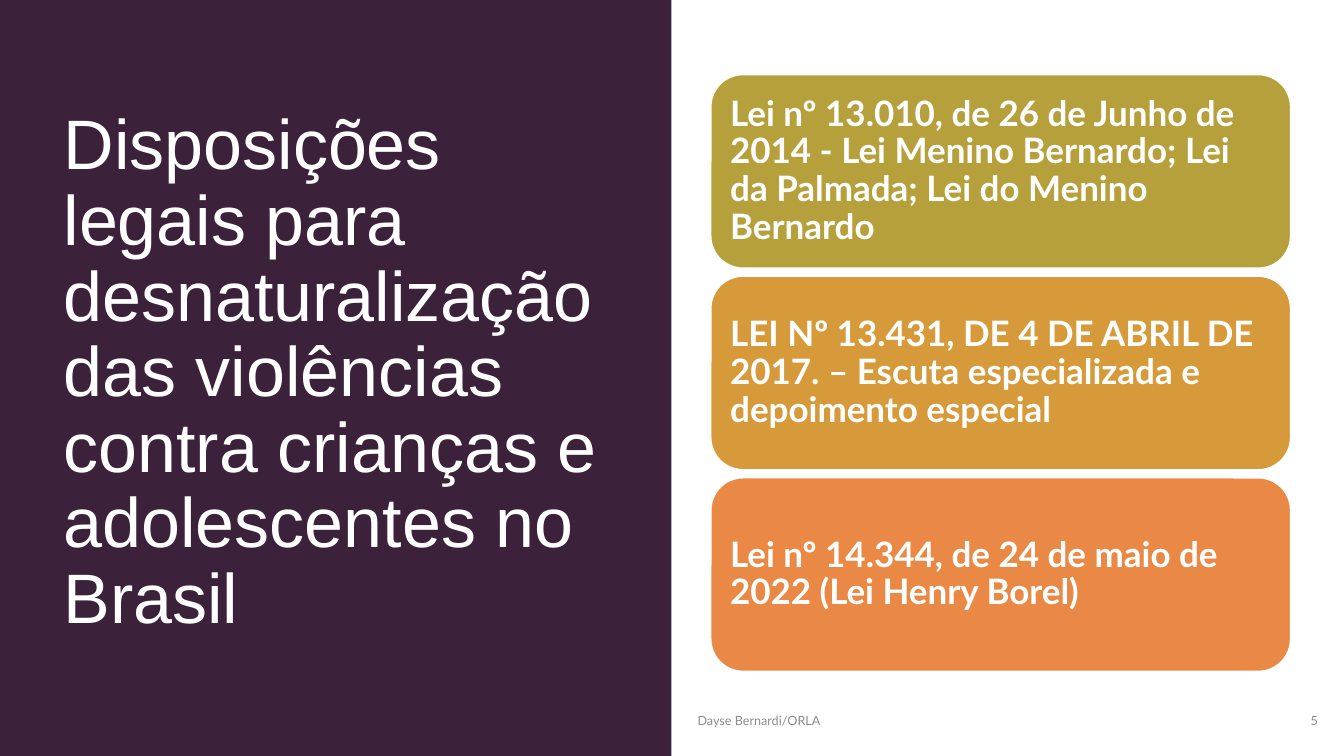
"""Build the slide on Brazilian child-protection laws."""
from pptx import Presentation
from pptx.dml.color import RGBColor
from pptx.enum.shapes import MSO_SHAPE
from pptx.enum.text import MSO_ANCHOR, MSO_AUTO_SIZE, PP_ALIGN
from pptx.util import Inches, Pt

PLUM = RGBColor(0x3B, 0x21, 0x3A)
WHITE = RGBColor(0xFF, 0xFF, 0xFF)
GRAY = RGBColor(0x8C, 0x8C, 0x8C)
OLIVE = RGBColor(0xB6, 0xA0, 0x3C)
OCHRE = RGBColor(0xD6, 0x9A, 0x3B)
ORANGE = RGBColor(0xEA, 0x89, 0x46)

LAWS = [
    ("Lei nº 13.010, de 26 de Junho de 2014 - Lei Menino Bernardo; "
     "Lei da Palmada; Lei do Menino Bernardo", OLIVE),
    ("LEI Nº 13.431, DE 4 DE ABRIL DE 2017. – Escuta especializada e "
     "depoimento especial", OCHRE),
    ("Lei nº 14.344, de 24 de maio de 2022 (Lei Henry Borel)", ORANGE),
]
FOOTERS = [
    ("Dayse Bernardi/ORLA", 6.82, 4.5, PP_ALIGN.LEFT),
    ("5", 11.77, 1.4, PP_ALIGN.RIGHT),
]
TITLE_FONT = {"name": "Arial", "size": Pt(50), "bold": False}
LAW_FONT = {"name": "Lato", "size": Pt(25), "bold": True}
FOOTER_FONT = {"name": "Lato", "size": Pt(9), "bold": False}
CARD_TOP, CARD_HEIGHT, CARD_STEP = 0.74, 1.92, 2


def write(holder, text, font_format, color, align=PP_ALIGN.LEFT, spacing=0.9):
    frame = holder.text_frame
    frame.text = text
    frame.word_wrap = True
    frame.auto_size = MSO_AUTO_SIZE.NONE
    frame.vertical_anchor = MSO_ANCHOR.MIDDLE
    paragraph = frame.paragraphs[0]
    paragraph.alignment = align
    paragraph.line_spacing = spacing
    font = paragraph.runs[0].font
    for attribute, value in font_format.items():
        setattr(font, attribute, value)
    font.color.rgb = color
    return frame


presentation = Presentation()
presentation.slide_width = Inches(13.33)
presentation.slide_height = Inches(7.5)
slide = presentation.slides.add_slide(presentation.slide_layouts[5])

title = slide.shapes.title
title.left, title.top = Inches(0.53), Inches(0.53)
title.width, title.height = Inches(5.55), Inches(6.36)
write(title, "Disposições legais para desnaturalização das violências "
      "contra crianças e adolescentes no Brasil", TITLE_FONT, WHITE)

panel = slide.shapes.add_shape(MSO_SHAPE.RECTANGLE, 0, 0, Inches(6.66), Inches(7.5))
panel.shadow.inherit = False
panel.fill.solid()
panel.fill.fore_color.rgb = PLUM
panel.line.fill.background()
title._element.addprevious(panel._element)

for text, left, width, align in FOOTERS:
    footer = slide.shapes.add_textbox(Inches(left), Inches(6.95), Inches(width), Inches(0.4))
    write(footer, text, FOOTER_FONT, GRAY, align, 1.0)

for row, (law, color) in enumerate(LAWS):
    card = slide.shapes.add_shape(
        MSO_SHAPE.ROUNDED_RECTANGLE, Inches(7.05), Inches(CARD_TOP + row * CARD_STEP),
        Inches(5.75), Inches(CARD_HEIGHT))
    card.shadow.inherit = False
    card.fill.solid()
    card.fill.fore_color.rgb = color
    card.line.color.rgb = WHITE
    card.line.width = Pt(1)
    frame = write(card, law, LAW_FONT, WHITE)
    for side in ("left", "top", "right", "bottom"):
        setattr(frame, f"margin_{side}", Inches(0.1))

presentation.save("out.pptx")
